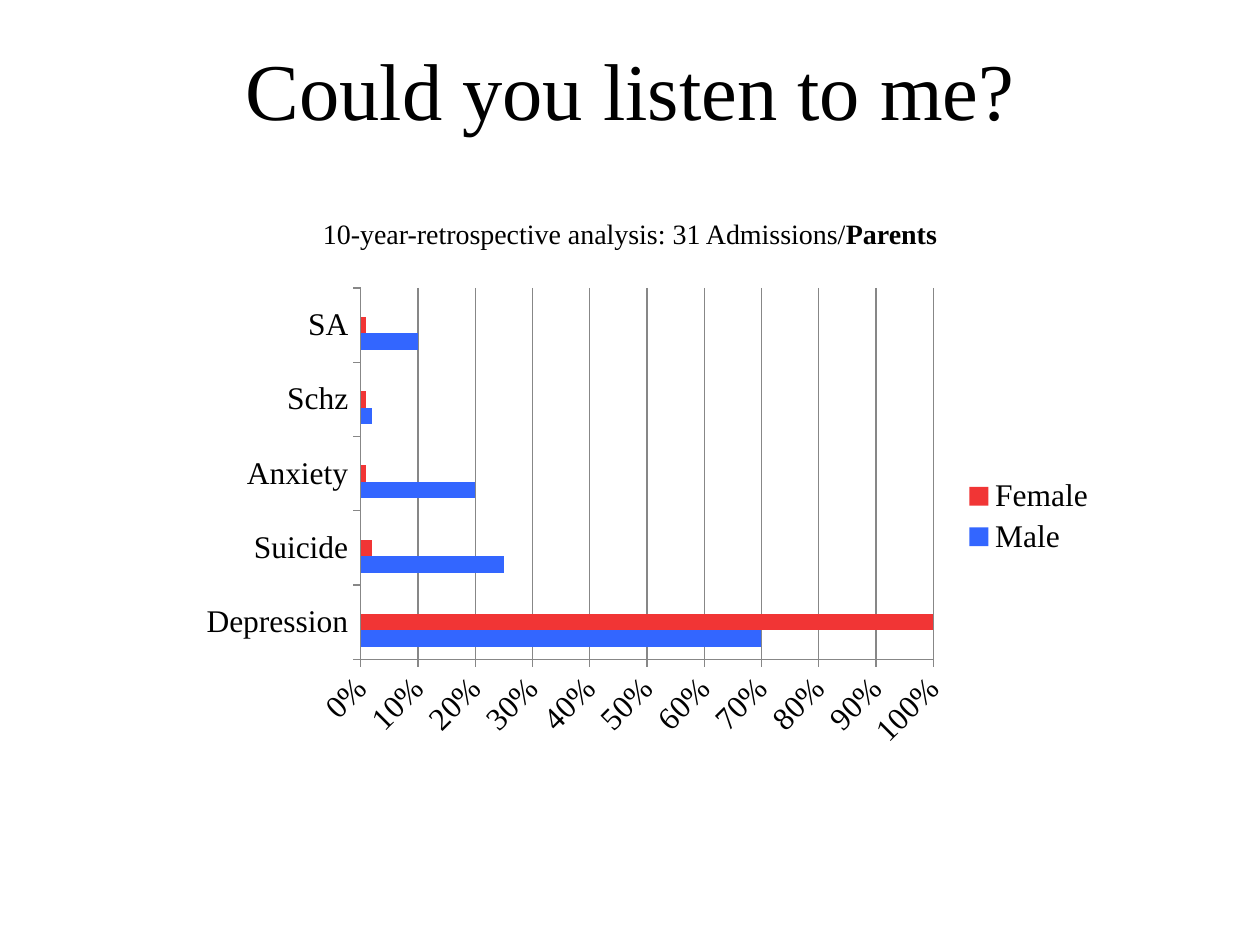
from lxml.etree import SubElement
from pptx import Presentation
from pptx.chart.data import CategoryChartData
from pptx.dml.color import RGBColor
from pptx.enum.chart import XL_CHART_TYPE, XL_LEGEND_POSITION, XL_TICK_MARK
from pptx.enum.text import MSO_ANCHOR, PP_ALIGN
from pptx.oxml import parse_xml
from pptx.oxml.ns import nsdecls, qn
from pptx.util import Inches, Pt

FONT = "Times New Roman"
HUES = {"text": "000000", "axis": "878787", "male": "3366FF",
        "female": "F13535", "spare": "7A500A"}
CATS = ["Depression", "Suicide", "Anxiety", "Schz", "SA"]
SERIES = [
    ("Male", [0.7, 0.25, 0.2, 0.02, 0.1], "male"),
    ("Female", [1, 0.02, 0.01, 0.01, 0.01], "female"),
    ("Column1", [None] * len(CATS), "spare"),
]
PLOT = {"x": 0.19, "y": 0.02, "w": 0.62, "h": 0.78}  # shares of the chart


def color(key):
    return RGBColor.from_string(HUES[key])


def style(font, size):
    font.name, font.size = FONT, Pt(size)
    font.color.rgb = color("text")


def place(shape, *box):
    shape.left, shape.top, shape.width, shape.height = map(Inches, box)


def fill_text(shape, size, *parts):
    """Write one centred line from (text, bold) parts."""
    frame = shape.text_frame
    frame.word_wrap = True
    frame.vertical_anchor = MSO_ANCHOR.MIDDLE
    line = frame.paragraphs[0]
    line.alignment = PP_ALIGN.CENTER
    style(line.font, size)
    for text, bold in parts:
        run = line.add_run()
        run.text = text
        if bold:
            run.font.bold = True


def set_axis(axis):
    axis.major_tick_mark = XL_TICK_MARK.OUTSIDE
    axis.minor_tick_mark = XL_TICK_MARK.NONE
    axis.format.line.color.rgb = color("axis")
    style(axis.tick_labels.font, 18)


def set_plot(chart):
    """Fix the inner plot area by shares of the chart."""
    area = chart.plots[0]._element.getparent()
    for old in area.findall(qn("c:layout")):
        area.remove(old)
    layout = parse_xml(f"<c:layout {nsdecls('c')}/>")
    manual = SubElement(layout, qn("c:manualLayout"))
    SubElement(manual, qn("c:layoutTarget"), val="inner")
    for tag in ("xMode", "yMode"):
        SubElement(manual, qn("c:" + tag), val="edge")
    for tag, share in PLOT.items():
        SubElement(manual, qn("c:" + tag), val=str(share))
    area.insert(0, layout)


def set_legend(chart):
    chart.has_legend = True
    legend = chart.legend
    legend.position = XL_LEGEND_POSITION.RIGHT
    legend.include_in_layout = False
    style(legend.font, 18)
    # Horizontal bars list the legend in reverse: entry 0 is the empty series.
    entry = parse_xml(f'<c:legendEntry {nsdecls("c")}><c:idx val="0"/>'
                      '<c:delete val="1"/></c:legendEntry>')
    legend._element.find(qn("c:legendPos")).addnext(entry)


def add_bars(slide):
    data = CategoryChartData(number_format="0%")
    data.categories = CATS
    for name, values, _ in SERIES:
        data.add_series(name, values)
    box = map(Inches, (1.47, 2.21, 7.33, 3.78))
    chart = slide.shapes.add_chart(XL_CHART_TYPE.BAR_CLUSTERED, *box, data).chart
    chart.has_title = False
    style(chart.font, 18)

    plot = chart.plots[0]
    plot.gap_width = 150
    plot.vary_by_categories = False
    for bar, (_, _, key) in zip(plot.series, SERIES):
        bar.format.fill.solid()
        bar.format.fill.fore_color.rgb = color(key)

    set_axis(chart.category_axis)
    scale = chart.value_axis
    set_axis(scale)
    scale.minimum_scale, scale.maximum_scale, scale.major_unit = 0, 1, 0.1
    scale.has_major_gridlines = True
    scale.major_gridlines.format.line.color.rgb = color("axis")
    scale.tick_labels.number_format = "0%"
    scale.tick_labels.number_format_is_linked = False
    body = scale._element.find(qn("c:txPr")).find(qn("a:bodyPr"))
    body.set("rot", str(-45 * 60000))
    body.set("vert", "horz")
    set_plot(chart)
    set_legend(chart)


def main():
    deck = Presentation()
    deck.slide_width, deck.slide_height = Inches(10), Inches(7.5)
    slide = deck.slides.add_slide(deck.slide_layouts[5])
    title = slide.shapes.title
    place(title, 1, 0.23, 8, 0.95)
    fill_text(title, 46, ("Could you listen to me?", False))
    note = slide.shapes.add_textbox(*map(Inches, (1, 1.6, 8, 0.5)))
    fill_text(note, 16, ("10-year-retrospective analysis: 31 Admissions/", False),
              ("Parents", True))
    add_bars(slide)
    deck.save("out.pptx")


if __name__ == "__main__":
    main()
